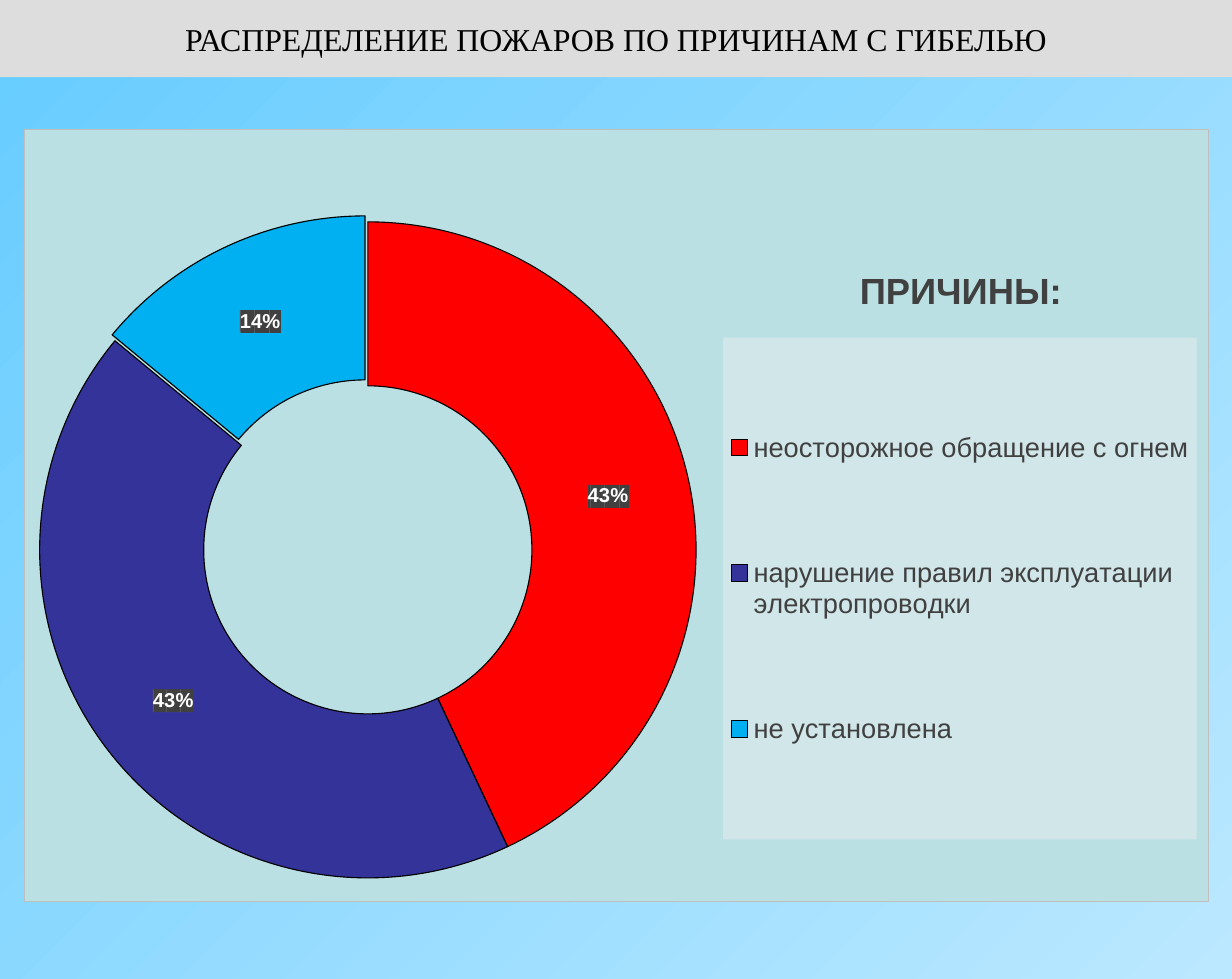
from lxml.etree import SubElement
from pptx import Presentation
from pptx.chart.data import CategoryChartData
from pptx.dml.color import RGBColor
from pptx.enum.chart import XL_CHART_TYPE, XL_LEGEND_POSITION
from pptx.enum.text import MSO_ANCHOR, PP_ALIGN
from pptx.oxml import parse_xml
from pptx.oxml.ns import nsdecls, qn
from pptx.util import Pt

CAUSES = [
    ("неосторожное обращение с огнем", 43, "FF0000"),
    ("нарушение правил эксплуатации электропроводки", 43, "333399"),
    ("не установлена", 14, "00B0F0"),
]


def color(code):
    return RGBColor.from_string(code)


def solid(code):
    return f'<a:solidFill><a:srgbClr val="{code}"/></a:solidFill>'


def fill_part(part, fill, line=""):
    """Give a chart part, whose font is set, its fill and border."""
    part.find(qn("c:txPr")).addprevious(parse_xml(
        f'<c:spPr {nsdecls("c", "a")}>{fill}{line}</c:spPr>'))


def place(part, **spots):
    """Set a manual layout in fractions of the chart."""
    for old in part.findall(qn("c:layout")):
        part.remove(old)
    layout = parse_xml(f'<c:layout {nsdecls("c")}/>')
    manual = SubElement(layout, qn("c:manualLayout"))
    if part.tag == qn("c:plotArea"):
        SubElement(manual, qn("c:layoutTarget")).set("val", "inner")
    for name in ("xMode", "yMode"):
        SubElement(manual, qn(f"c:{name}")).set("val", "edge")
    for name, value in spots.items():
        SubElement(manual, qn(f"c:{name}")).set("val", str(value))
    over = part.find(qn("c:overlay"))
    if over is None:
        part.insert(0, layout)
    else:
        over.addprevious(layout)


class Deck:
    dark, black, white = "404040", "000000", "FFFFFF"
    sans, serif = "Arial", "Times New Roman"

    def __init__(self, width, height):
        self.file = Presentation()
        self.file.slide_width, self.file.slide_height = Pt(width), Pt(height)
        self.slide = self.file.slides.add_slide(self.file.slide_layouts[5])

    def style(self, font, size, code, bold=False, name=sans):
        font.name, font.size, font.bold = name, Pt(size), bold
        font.color.rgb = color(code)

    def backdrop(self, start, end):
        fill = self.slide.background.fill
        fill.gradient()
        fill.gradient_angle = 315
        for stop, code, spot in zip(fill.gradient_stops, (start, end), (0, 1)):
            stop.color.rgb, stop.position = color(code), spot

    def title(self, text, width, height, back):
        box = self.slide.shapes.title
        box.left, box.top, box.width, box.height = 0, 0, Pt(width), Pt(height)
        box.fill.solid()
        box.fill.fore_color.rgb = color(back)
        frame = box.text_frame
        frame.text, frame.word_wrap = text, True
        frame.vertical_anchor = MSO_ANCHOR.MIDDLE
        frame.margin_left = frame.margin_right = Pt(8.64)
        frame.margin_top = frame.margin_bottom = Pt(4.32)
        line = frame.paragraphs[0]
        line.alignment = PP_ALIGN.CENTER
        self.style(line.font, 21, self.black, name=self.serif)

    def ring(self, causes, head, left, top, width, height):
        data = CategoryChartData()
        data.categories = [name for name, _, _ in causes]
        data.add_series("Series 1", [value for _, value, _ in causes])
        chart = self.slide.shapes.add_chart(
            XL_CHART_TYPE.DOUGHNUT, Pt(left), Pt(top), Pt(width), Pt(height),
            data).chart
        self.style(chart.font, 10, self.black)
        fill_part(chart.element, solid("BBE0E3"),
                  f'<a:ln w="9525">{solid("BFBFBF")}</a:ln>')

        # Heading above the legend
        chart.has_title = True
        frame = chart.chart_title.text_frame
        frame.text = head
        self.style(frame.paragraphs[0].font, 24, self.dark, True)
        place(chart.chart_title.element, x=0.7, y=0.17)

        # Legend panel
        chart.has_legend = True
        legend = chart.legend
        legend.position = XL_LEGEND_POSITION.RIGHT
        legend.include_in_layout = False
        self.style(legend.font, 18, self.dark)
        fill_part(legend._element, solid("D1E6E9"))
        place(legend._element, x=0.59, y=0.27, w=0.4, h=0.65)

        # Slices, the last one pulled out
        plot = chart.plots[0]
        plot.vary_by_categories = True
        points = plot.series[0].points
        for index, (_, _, code) in enumerate(causes):
            form = points[index].format
            form.fill.solid()
            form.fill.fore_color.rgb = color(code)
            form.line.color.rgb = color(self.black)
            form.line.width = Pt(0.75)
        last = plot.series[0]._element.findall(qn("c:dPt"))[-1]
        last.find(qn("c:spPr")).addprevious(
            parse_xml(f'<c:explosion {nsdecls("c")} val="4"/>'))
        place(chart.element.find(".//" + qn("c:plotArea")),
              x=0.01, y=0.12, w=0.56, h=0.85)

        # Percent labels
        labels = plot.data_labels
        labels.show_percentage, labels.show_value = True, False
        labels.number_format, labels.number_format_is_linked = "0%", False
        self.style(labels.font, 13.3, self.white, True)
        fill_part(labels._element, (
            '<a:pattFill prst="dkVert"><a:fgClr><a:srgbClr val="404040"/>'
            '</a:fgClr><a:bgClr><a:srgbClr val="595959"/></a:bgClr>'
            '</a:pattFill>'))


def main():
    width, height = 813.6, 646.56
    deck = Deck(width, height)
    deck.backdrop("66CCFF", "BBE8FF")
    deck.title("РАСПРЕДЕЛЕНИЕ ПОЖАРОВ ПО ПРИЧИНАМ С ГИБЕЛЬЮ",
               width, 51, "DDDDDD")
    deck.ring(CAUSES, "ПРИЧИНЫ:", 15.84, 85, 782.6, 510.5)
    deck.file.save("out.pptx")


if __name__ == "__main__":
    main()
